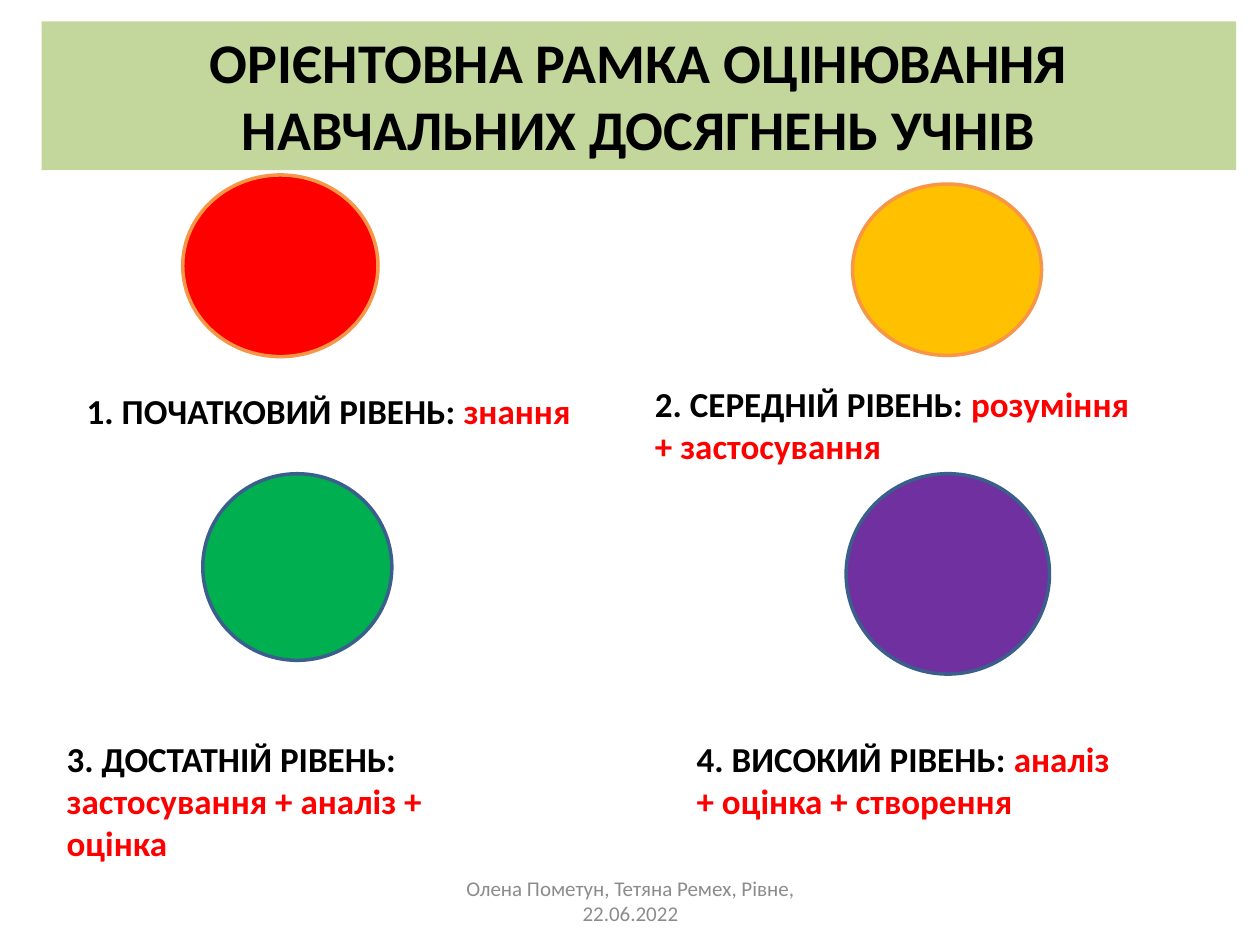
from pptx import Presentation
from pptx.dml.color import RGBColor
from pptx.enum.shapes import MSO_SHAPE
from pptx.enum.text import MSO_ANCHOR, MSO_AUTO_SIZE, PP_ALIGN
from pptx.util import Pt

OVAL = MSO_SHAPE.OVAL
RECTANGLE = MSO_SHAPE.RECTANGLE
MIDDLE = MSO_ANCHOR.MIDDLE
TOP = MSO_ANCHOR.TOP
GROW = MSO_AUTO_SIZE.SHAPE_TO_FIT_TEXT
CENTER = PP_ALIGN.CENTER

FONT = "Calibri"
BLACK = "000000"
RED = "FF0000"
ORANGE = "F79646"
BLUE = "3A5F8C"

CIRCLES = [
    ((104.4, 100, 111.6, 103.8), RED, ORANGE),
    ((115.9, 270.7, 108, 106.6), "00B050", BLUE),
    ((487.2, 105.2, 108, 97.9), "FFC000", ORANGE),
    ((483.5, 270.7, 116.2, 114.5), "7030A0", BLUE),
]

LEVELS = [
    ((42.5, 218.9, 302.4, 31.5), "1. ПОЧАТКОВИЙ РІВЕНЬ: ", "знання", False),
    ((367.2, 215.3, 290.2, 55.7), "2. СЕРЕДНІЙ РІВЕНЬ: ", "розуміння + застосування", True),
    ((31, 417.6, 261.4, 79.9), "3. ДОСТАТНІЙ РІВЕНЬ: ", "застосування + аналіз + оцінка", True),
    ((391, 417.6, 250.6, 55.7), "4. ВИСОКИЙ РІВЕНЬ: ", "аналіз + оцінка + створення", True),
]


def color(value):
    return RGBColor.from_string(value)


def points(box):
    return [Pt(length) for length in box]


def format_run(run, size, font_color, bold=False):
    run.font.name = FONT
    run.font.size = Pt(size)
    run.font.bold = bold
    run.font.color.rgb = color(font_color)


def add_filled_shape(slide, kind, box, fill, line=None):
    shape = slide.shapes.add_shape(kind, *points(box))
    shape.shadow.inherit = False
    shape.fill.solid()
    shape.fill.fore_color.rgb = color(fill)
    if line:
        shape.line.color.rgb = color(line)
        shape.line.width = Pt(2)
    else:
        shape.line.fill.background()
    return shape


def write_centered(shape, text, size, font_color, bold=False, anchor=MIDDLE):
    text_frame = shape.text_frame
    text_frame.word_wrap = True
    text_frame.vertical_anchor = anchor
    text_frame.text = text
    paragraph = text_frame.paragraphs[0]
    paragraph.alignment = CENTER
    format_run(paragraph.runs[0], size, font_color, bold)


def add_level(slide, box, title, skills, wrap):
    text_frame = slide.shapes.add_textbox(*points(box)).text_frame
    text_frame.word_wrap = wrap
    text_frame.auto_size = GROW
    text_frame.text = title
    paragraph = text_frame.paragraphs[0]
    format_run(paragraph.runs[0], 20, BLACK, True)
    skills_run = paragraph.add_run()
    skills_run.text = skills
    format_run(skills_run, 20, RED, True)


def main():
    presentation = Presentation()
    presentation.slide_width = Pt(720)
    presentation.slide_height = Pt(540)
    slide = presentation.slides.add_slide(presentation.slide_layouts[6])

    for box, fill, line in CIRCLES:
        add_filled_shape(slide, OVAL, box, fill, line)
    for level in LEVELS:
        add_level(slide, *level)

    banner = add_filled_shape(slide, RECTANGLE, (23.8, 12.2, 682.6, 85), "C3D69B")
    write_centered(banner, "ОРІЄНТОВНА РАМКА ОЦІНЮВАННЯ НАВЧАЛЬНИХ ДОСЯГНЕНЬ УЧНІВ",
                   32, BLACK, True, TOP)
    banner.text_frame.auto_size = GROW

    footer = slide.shapes.add_textbox(*points((246.2, 500.4, 228.2, 28.8)))
    write_centered(footer, "Олена Пометун, Тетяна Ремех, Рівне, 22.06.2022", 12, "8C8C8C")

    presentation.save("out.pptx")


if __name__ == "__main__":
    main()
